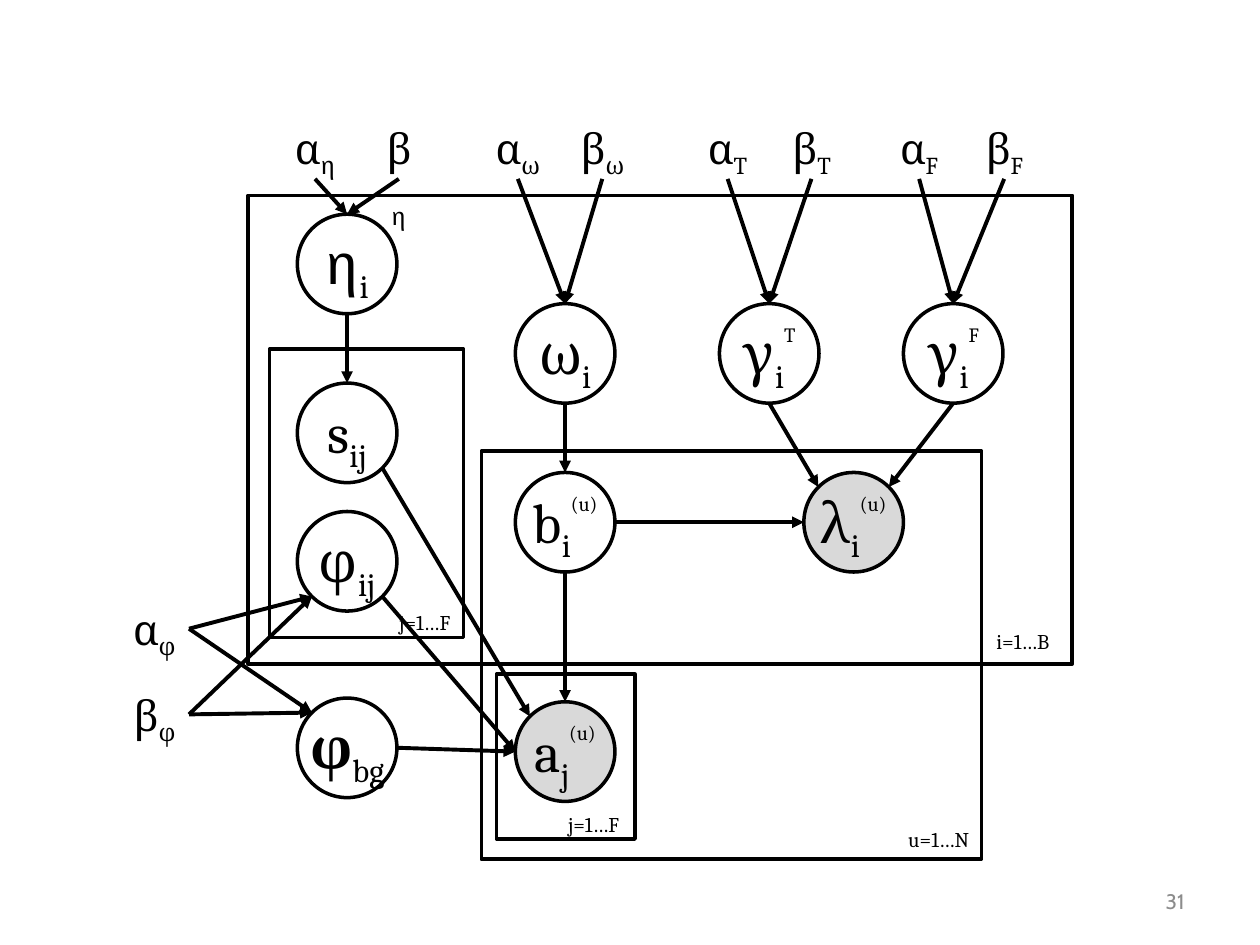
from collections import namedtuple
from dataclasses import dataclass
from math import cos, radians, sin

from lxml import etree
from pptx import Presentation
from pptx.dml.color import RGBColor
from pptx.enum.shapes import MSO_CONNECTOR, MSO_SHAPE
from pptx.enum.text import MSO_ANCHOR, MSO_AUTO_SIZE, PP_ALIGN
from pptx.oxml.ns import qn
from pptx.util import Inches, Pt

ELLIPSE, RECTANGLE = MSO_SHAPE.OVAL, MSO_SHAPE.RECTANGLE
STRAIGHT = MSO_CONNECTOR.STRAIGHT
TOP, MIDDLE = MSO_ANCHOR.TOP, MSO_ANCHOR.MIDDLE
LEFT, CENTER, RIGHT = PP_ALIGN.LEFT, PP_ALIGN.CENTER, PP_ALIGN.RIGHT
FIT, FIXED = MSO_AUTO_SIZE.SHAPE_TO_FIT_TEXT, MSO_AUTO_SIZE.NONE
COLUMNS, ROWS = 10, 7.5
NODE = 0.79
PRIOR_ROW, PRIOR_HEIGHT = 0.92, 0.5
SIDE_BOTTOM, SIDE_RIGHT = 2, 3
ANGLES = {"right": 0, "lower right": 45, "bottom": 90, "left": 180,
          "upper left": 225, "top": 270, "upper right": 315}


@dataclass(frozen=True)
class Theme:
    ink: RGBColor = RGBColor(0, 0, 0)
    observed: RGBColor = RGBColor(0xD9, 0xD9, 0xD9)
    muted: RGBColor = RGBColor(0x8C, 0x8C, 0x8C)
    math_font: str = "Cambria"
    number_font: str = "Cabin"
    node: int = 32
    superscript: int = 20
    prior: int = 24
    caption: int = 12
    outline: float = 2
    arrow: float = 2.25


THEME = Theme()
Box = namedtuple("Box", "left top width height")
Node = namedtuple("Node", "column row symbol sub sup observed bold",
                  defaults=("", False, False))

NODES = {
    "eta": Node(2.36, 1.7, "η", "i"),
    "s": Node(2.36, 3.04, "s", "ij"),
    "phi": Node(2.36, 4.06, "φ", "ij"),
    "background": Node(2.36, 5.54, "φ", "bg", bold=True),
    "a": Node(4.09, 5.57, "a", "j", "(u)", True),
    "b": Node(4.09, 3.75, "b", "i", "(u)"),
    "lambda": Node(6.38, 3.75, "λ", "i", "(u)", True),
    "gamma T": Node(5.71, 2.41, "γ", "i", "T"),
    "gamma F": Node(7.17, 2.41, "γ", "i", "F"),
    "omega": Node(4.09, 2.41, "ω", "i"),
}
EDGES = [
    ("eta", "bottom", "s", "top"),
    ("s", "lower right", "a", "upper left"),
    ("phi", "lower right", "a", "left"),
    ("background", "right", "a", "left"),
    ("b", "bottom", "a", "top"),
    ("omega", "bottom", "b", "top"),
    ("b", "right", "lambda", "left"),
    ("gamma T", "bottom", "lambda", "upper left"),
    ("gamma F", "bottom", "lambda", "upper right"),
]
PLATES = [
    ((1.97, 1.55, 6.54, 3.72), "i=1…B", (7.81, 4.94, 0.7, 0.3)),
    ((2.14, 2.77, 1.54, 2.29), "j=1…F", (3.07, 4.79, 0.68, 0.3)),
    ((3.82, 3.58, 3.97, 3.24), "u=1…N", (7.11, 6.51, 0.75, 0.3)),
    ((3.94, 5.35, 1.1, 1.31), "j=1…F", (4.41, 6.39, 0.68, 0.3)),
]
TOP_PRIORS = [
    ("η", "eta", (2.24, 0.52), (2.91, 0.51)),
    ("ω", "omega", (3.83, 0.56), (4.5, 0.56)),
    ("T", "gamma T", (5.51, 0.53), (6.18, 0.52)),
    ("F", "gamma F", (7.03, 0.53), (7.71, 0.52)),
]
SIDE_PRIORS = [("α", 4.74), ("β", 5.42)]


def point(box, column, row):
    return (round(box.left + box.width * column / COLUMNS),
            round(box.top + box.height * row / ROWS))


def cell(box, column, row, width, height):
    return Box(*point(box, column, row), round(box.width * width / COLUMNS),
               round(box.height * height / ROWS))


def add_span(para, text, size, base=0, bold=False, font=THEME.math_font, color=THEME.ink):
    span = para.add_run()
    span.text = text
    span.font.size = Pt(size)
    span.font.name = font
    span.font.bold = bold
    span.font.color.rgb = color
    if base:
        span._r.get_or_add_rPr().set("baseline", str(base * 1000))


def add_label(page, place, align, wrap=False):
    label = page.shapes.add_textbox(*place)
    frame = label.text_frame
    frame.word_wrap = wrap
    frame.auto_size = FIXED if wrap else FIT
    frame.paragraphs[0].alignment = align
    return label


def add_outline(page, kind, place, fill=None):
    shape = page.shapes.add_shape(kind, *place)
    shape.shadow.inherit = False
    if fill is None:
        shape.fill.background()
    else:
        shape.fill.solid()
        shape.fill.fore_color.rgb = fill
    shape.line.color.rgb = THEME.ink
    shape.line.width = Pt(THEME.outline)
    return shape


def add_arrow(page, start, end):
    arrow = page.shapes.add_connector(STRAIGHT, *start, *end)
    arrow.line.color.rgb = THEME.ink
    arrow.line.width = Pt(THEME.arrow)
    etree.SubElement(arrow.line._get_or_add_ln(), qn("a:tailEnd"), type="triangle")
    etree.SubElement(arrow._element.spPr, qn("a:effectLst"))
    return arrow


def rim(box, name, side):
    node, angle = NODES[name], radians(ANGLES[side])
    radius = NODE / 2
    return point(box, node.column + radius * (1 + cos(angle)),
                 node.row + radius * (1 + sin(angle)))


def draw_nodes(page, box):
    for node in NODES.values():
        place = cell(box, node.column, node.row, NODE, NODE)
        circle = add_outline(page, ELLIPSE, place, THEME.observed if node.observed else None)
        frame = circle.text_frame
        frame.word_wrap = False
        frame.vertical_anchor = TOP
        frame.margin_top = 0
        para = frame.paragraphs[0]
        para.alignment = CENTER
        add_span(para, node.symbol, THEME.node, bold=node.bold)
        add_span(para, node.sub, THEME.node, -25)
        if node.sup:
            add_span(para, node.sup, THEME.superscript, 90)


def draw_edges(page, box):
    for source, leaving, target, entering in EDGES:
        add_arrow(page, rim(box, source, leaving), rim(box, target, entering))


def draw_plates(page, box):
    for frame_place, caption, caption_place in PLATES:
        add_outline(page, RECTANGLE, cell(box, *frame_place))
        label = add_label(page, cell(box, *caption_place), LEFT)
        add_span(label.text_frame.paragraphs[0], caption, THEME.caption)


def draw_prior(page, place, symbol, sub, side, ends, wrap=False):
    label = add_label(page, place, CENTER, wrap)
    para = label.text_frame.paragraphs[0]
    add_span(para, symbol, THEME.prior)
    add_span(para, sub, THEME.prior, -25)
    for end in ends:
        add_arrow(page, (place.left, place.top), end).begin_connect(label, side)


def draw_priors(page, box):
    for sub, target, *spots in TOP_PRIORS:
        for symbol, (column, width) in zip("αβ", spots):
            place = cell(box, column, PRIOR_ROW, width, PRIOR_HEIGHT)
            draw_prior(page, place, symbol, sub, SIDE_BOTTOM, [rim(box, target, "top")],
                       wrap=symbol + sub == "βη")
    ends = [rim(box, "phi", "lower right"), rim(box, "background", "upper left")]
    phi = NODES["phi"]
    reach = NODE / 2 * cos(radians(45))
    ends[0] = point(box, phi.column + NODE / 2 - reach, phi.row + NODE / 2 + reach)
    for symbol, row in SIDE_PRIORS:
        draw_prior(page, cell(box, 0.95, row, 0.55, PRIOR_HEIGHT), symbol, "φ", SIDE_RIGHT, ends)


def draw_page_number(page, box):
    label = add_label(page, cell(box, 7.17, 6.95, 2.33, 0.4), RIGHT, wrap=True)
    label.text_frame.vertical_anchor = MIDDLE
    add_span(label.text_frame.paragraphs[0], "31", THEME.caption,
             font=THEME.number_font, color=THEME.muted)


def main():
    deck = Presentation()
    deck.slide_width, deck.slide_height = Inches(10), Inches(7.5)
    page = deck.slides.add_slide(deck.slide_layouts[6])
    box = Box(0, 0, deck.slide_width, deck.slide_height)
    for draw in (draw_nodes, draw_edges, draw_plates, draw_priors, draw_page_number):
        draw(page, box)
    deck.save("out.pptx")


if __name__ == "__main__":
    main()
